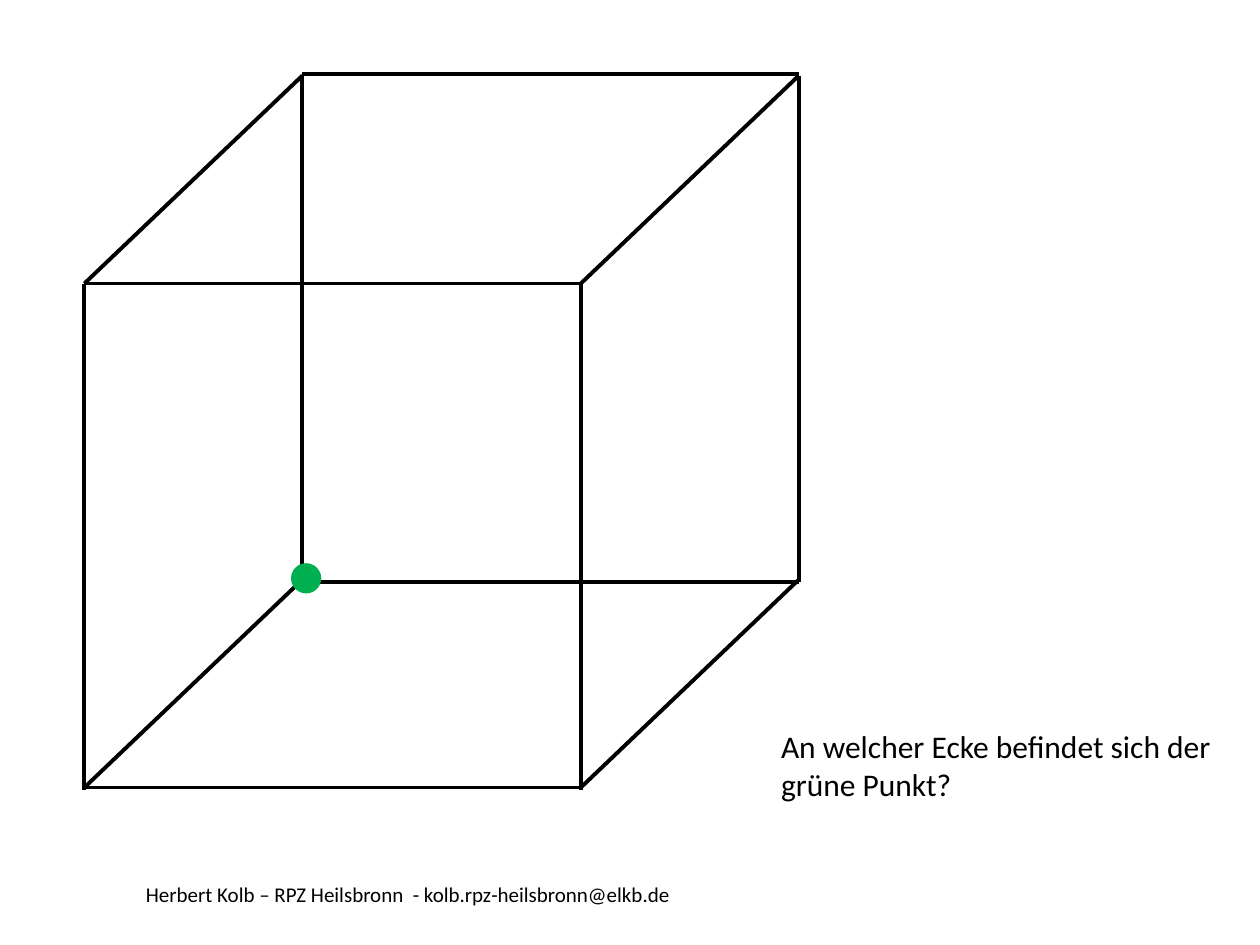
from lxml.etree import SubElement
from pptx import Presentation
from pptx.dml.color import RGBColor
from pptx.enum.shapes import MSO_CONNECTOR, MSO_SHAPE
from pptx.enum.text import MSO_ANCHOR
from pptx.oxml.ns import qn
from pptx.util import Inches, Pt

COLORS = {"ink": "000000", "dot": "00B050"}

presentation = Presentation()
presentation.slide_width = Inches(10)
presentation.slide_height = Inches(7.5)
slide = presentation.slides.add_slide(presentation.slide_layouts[6])


def add_text(left, top, width, height, text, size):
    box = slide.shapes.add_textbox(
        Inches(left), Inches(top), Inches(width), Inches(height)
    )
    frame = box.text_frame
    frame.word_wrap = True
    frame.vertical_anchor = MSO_ANCHOR.TOP
    frame.text = text
    font = frame.paragraphs[0].runs[0].font
    font.name = "Calibri"
    font.size = Pt(size)
    font.color.rgb = RGBColor.from_string(COLORS["ink"])


add_text(1.06, 6.95, 5.52, 0.4,
         "Herbert Kolb – RPZ Heilsbronn  - kolb.rpz-heilsbronn@elkb.de", 12)
add_text(6.1, 5.72, 3.62, 0.71,
         "An welcher Ecke befindet sich der grüne Punkt?", 18)

side = 3.94
height = 4.02
front_left, front_top, front_bottom = 0.67, 2.25, 6.25
back_left, back_top, back_bottom = 2.4, 0.6, 4.6

edges = []
for left, y in [(back_left, 4.62), (front_left, front_bottom),
                (front_left, front_top), (back_left, 0.59)]:
    edges.append((left + side, y, left, y))
for shift in (0, side):
    front_x, back_x = front_left + shift, back_left + shift
    edges += [
        (front_x, front_top, front_x, front_top + height),
        (back_x, back_top, back_x, back_top + height),
        (back_x, back_top, front_x, front_top),
        (back_x, back_bottom, front_x, front_bottom),
    ]

cube = slide.shapes.add_group_shape()
for edge in edges:
    line = cube.shapes.add_connector(
        MSO_CONNECTOR.STRAIGHT, *[Inches(value) for value in edge]
    )
    line.line.color.rgb = RGBColor.from_string(COLORS["ink"])
    line.line.width = Pt(2.25)
    SubElement(line._element.spPr, qn("a:effectLst"))

green_point = slide.shapes.add_shape(
    MSO_SHAPE.OVAL, Inches(2.31), Inches(4.47), Inches(0.24), Inches(0.24)
)
green_point.shadow.inherit = False
green_point.fill.solid()
green_point.fill.fore_color.rgb = RGBColor.from_string(COLORS["dot"])
green_point.line.fill.background()

presentation.save("out.pptx")
